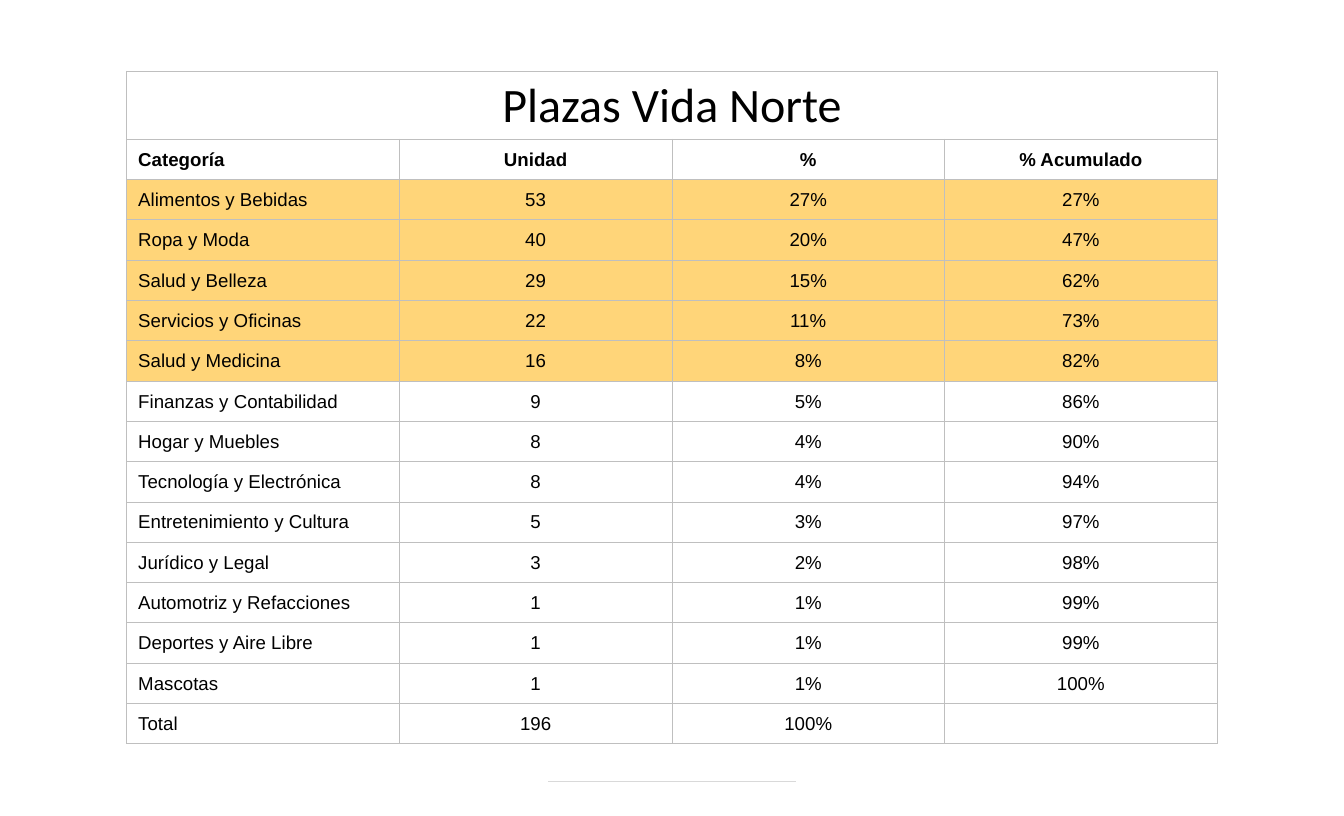
from lxml.etree import SubElement
from pptx import Presentation
from pptx.dml.color import RGBColor
from pptx.enum.shapes import MSO_CONNECTOR
from pptx.enum.text import MSO_ANCHOR, PP_ALIGN
from pptx.oxml.ns import qn
from pptx.util import Inches, Pt

HIGHLIGHT = "FFD579"
BORDER = "BFBFBF"
HEADERS = ("Categoría", "Unidad", "%", "% Acumulado")
CATEGORIES = [
    ("Alimentos y Bebidas", "53", "27%", "27%"),
    ("Ropa y Moda", "40", "20%", "47%"),
    ("Salud y Belleza", "29", "15%", "62%"),
    ("Servicios y Oficinas", "22", "11%", "73%"),
    ("Salud y Medicina", "16", "8%", "82%"),
    ("Finanzas y Contabilidad", "9", "5%", "86%"),
    ("Hogar y Muebles", "8", "4%", "90%"),
    ("Tecnología y Electrónica", "8", "4%", "94%"),
    ("Entretenimiento y Cultura", "5", "3%", "97%"),
    ("Jurídico y Legal", "3", "2%", "98%"),
    ("Automotriz y Refacciones", "1", "1%", "99%"),
    ("Deportes y Aire Libre", "1", "1%", "99%"),
    ("Mascotas", "1", "1%", "100%"),
    ("Total", "196", "100%", ""),
]
HIGHLIGHTED_ROWS = range(2, 7)


def color(hex_string):
    return RGBColor.from_string(hex_string)


def format_cell(cell, text, size=14, font="Arial", bold=False,
                align=PP_ALIGN.CENTER, left=0.01, fill=None):
    # Borders come before the fill in the cell properties
    properties = cell._tc.get_or_add_tcPr()
    for side in ("a:lnL", "a:lnR", "a:lnT", "a:lnB"):
        line = SubElement(properties, qn(side), w=str(Pt(0.5)))
        solid = SubElement(line, qn("a:solidFill"))
        SubElement(solid, qn("a:srgbClr"), val=BORDER)
    if fill:
        cell.fill.solid()
        cell.fill.fore_color.rgb = color(fill)
    else:
        cell.fill.background()

    cell.vertical_anchor = MSO_ANCHOR.MIDDLE
    cell.margin_left = Inches(left)
    cell.margin_right = cell.margin_top = Inches(0.01)
    cell.margin_bottom = Inches(0)
    paragraph = cell.text_frame.paragraphs[0]
    paragraph.alignment = align
    if text:
        run = paragraph.add_run()
        run.text = text
        run.font.size = Pt(size)
        run.font.name = font
        run.font.bold = bold
        run.font.color.rgb = color("000000")


presentation = Presentation()
presentation.slide_width = Inches(14)
presentation.slide_height = Inches(8.5)
slide = presentation.slides.add_slide(presentation.slide_layouts[6])

# Footer rule
footer_rule = slide.shapes.add_connector(
    MSO_CONNECTOR.STRAIGHT, Inches(5.71), Inches(8.14), Inches(8.29), Inches(8.14))
footer_rule.line.color.rgb = color("D9D9D9")
footer_rule.line.width = Pt(0.5)
SubElement(footer_rule._element.spPr, qn("a:effectLst"))

# Table grid: a tall title row over equal rows
rows = [HEADERS] + CATEGORIES
table = slide.shapes.add_table(
    len(rows) + 1, len(HEADERS),
    Inches(1.32), Inches(0.74), Inches(11.36), Inches(7.01)).table
table.first_row = False
table.horz_banding = False
for row in table.rows:
    row.height = Inches(0.42)
table.rows[0].height = Inches(0.71)

# Title row
table.cell(0, 0).merge(table.cell(0, len(HEADERS) - 1))
for column_index in range(len(HEADERS)):
    title = "Plazas Vida Norte" if column_index == 0 else ""
    format_cell(table.cell(0, column_index), title, size=36, font="Calibri")

# Header, categories and total
for row_index, values in enumerate(rows, start=1):
    for column_index, value in enumerate(values):
        is_label = column_index == 0
        format_cell(
            table.cell(row_index, column_index), value,
            bold=row_index == 1,
            align=PP_ALIGN.LEFT if is_label else PP_ALIGN.CENTER,
            left=0.12 if is_label else 0.01,
            fill=HIGHLIGHT if row_index in HIGHLIGHTED_ROWS else None)

presentation.save("out.pptx")
